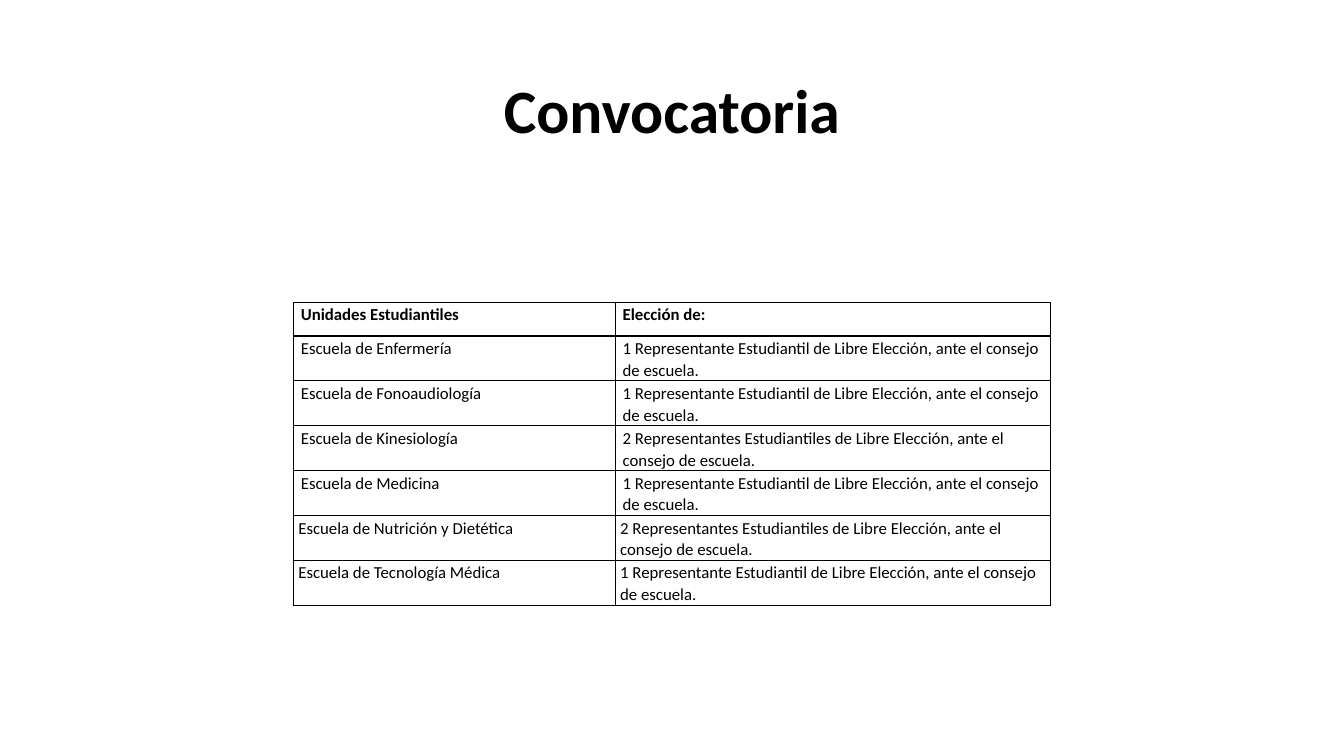
from lxml import etree
from pptx import Presentation
from pptx.dml.color import RGBColor
from pptx.enum.text import MSO_ANCHOR, MSO_AUTO_SIZE, PP_ALIGN
from pptx.oxml.ns import qn
from pptx.util import Pt

CENTER, LEFT = PP_ALIGN.CENTER, PP_ALIGN.LEFT
MIDDLE, TOP = MSO_ANCHOR.MIDDLE, MSO_ANCHOR.TOP
NO_FIT = MSO_AUTO_SIZE.NONE
TITLE_ONLY = 5
FONT = "Calibri"
BLACK = "000000"
WIDE, NARROW = 5.4, 3.6
COLUMN_WIDTHS = (229.9, 311)
HEADER_HEIGHT, ROW_HEIGHT = 24, 32.1

HEADER = ("Unidades Estudiantiles", "Elección de:")
ONE = "1 Representante Estudiantil de Libre Elección, ante el consejo de escuela."
TWO = "2 Representantes Estudiantiles de Libre Elección, ante el consejo de escuela."
SCHOOLS = (
    ("Escuela de Enfermería", ONE, WIDE),
    ("Escuela de Fonoaudiología", ONE, WIDE),
    ("Escuela de Kinesiología", TWO, WIDE),
    ("Escuela de Medicina", ONE, WIDE),
    ("Escuela de Nutrición y Dietética", TWO, NARROW),
    ("Escuela de Tecnología Médica", ONE, NARROW),
)


def color(value):
    """Turn a hex string into a colour."""
    return RGBColor.from_string(value)


def write(frame, text, size=12, bold=False, align=LEFT, spacing=1.07, after=8):
    """Write one formatted paragraph into a text frame."""
    para = frame.paragraphs[0]
    para.alignment = align
    para.line_spacing = spacing
    para.space_before = Pt(0)
    para.space_after = Pt(after)
    span = para.add_run()
    span.text = text
    span.font.name = FONT
    span.font.size = Pt(size)
    span.font.bold = bold
    span.font.color.rgb = color(BLACK)


def add_borders(cell, width=1, value=BLACK):
    """Draw a solid line on all four sides of a cell."""
    properties = cell._tc.get_or_add_tcPr()
    for side in ("lnL", "lnR", "lnT", "lnB"):
        line = etree.SubElement(properties, qn(f"a:{side}"), w=str(Pt(width)))
        fill = etree.SubElement(line, qn("a:solidFill"))
        etree.SubElement(fill, qn("a:srgbClr"), val=value)


def fill_cell(cell, text, margin, bold=False):
    """Format one table cell and write its text."""
    cell.margin_left = cell.margin_right = Pt(margin)
    cell.margin_top, cell.margin_bottom = Pt(0.7), Pt(0)
    cell.vertical_anchor = TOP
    add_borders(cell)
    cell.fill.background()
    write(cell.text_frame, text, bold=bold)


def add_title(page, text):
    """Place and fill the title placeholder."""
    title = page.shapes.title
    title.left, title.top = Pt(66), Pt(28.75)
    title.width, title.height = Pt(828), Pt(104.4)
    frame = title.text_frame
    frame.auto_size = NO_FIT
    frame.word_wrap = True
    frame.vertical_anchor = MIDDLE
    write(frame, text, size=44, bold=True, align=CENTER, spacing=0.9, after=0)


def add_election_table(page, left, top):
    """Add the table of schools and their elected representatives."""
    height = HEADER_HEIGHT + ROW_HEIGHT * len(SCHOOLS)
    table = page.shapes.add_table(
        len(SCHOOLS) + 1, len(HEADER),
        Pt(left), Pt(top), Pt(sum(COLUMN_WIDTHS)), Pt(height),
    ).table
    table.first_row = table.horz_banding = False
    for column, width in zip(table.columns, COLUMN_WIDTHS):
        column.width = Pt(width)
    for index, (*texts, margin) in enumerate([(*HEADER, WIDE), *SCHOOLS]):
        is_header = index == 0
        row = table.rows[index]
        row.height = Pt(HEADER_HEIGHT if is_header else ROW_HEIGHT)
        for cell, text in zip(row.cells, texts):
            fill_cell(cell, text, margin, bold=is_header)


def main():
    """Build the slide and save the deck."""
    deck = Presentation()
    deck.slide_width, deck.slide_height = Pt(960), Pt(540)
    page = deck.slides.add_slide(deck.slide_layouts[TITLE_ONLY])
    add_title(page, "Convocatoria")
    add_election_table(page, left=209.5, top=216)
    deck.save("out.pptx")


if __name__ == "__main__":
    main()
